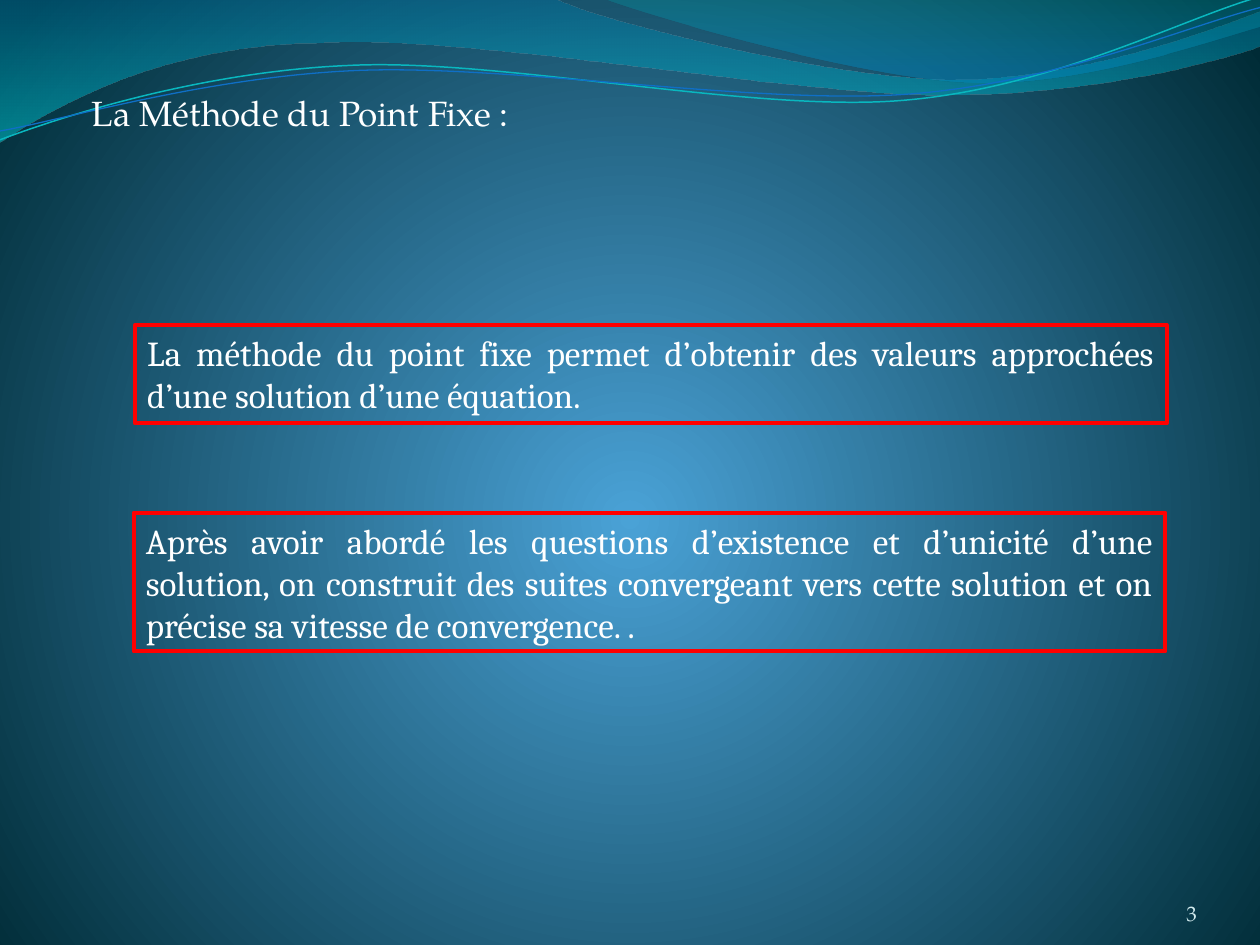
from lxml.etree import SubElement
from pptx import Presentation
from pptx.dml.color import RGBColor
from pptx.enum.shapes import MSO_SHAPE
from pptx.enum.text import MSO_ANCHOR as Anchor, MSO_AUTO_SIZE as AutoSize, PP_ALIGN as Align
from pptx.oxml.ns import qn
from pptx.util import Cm, Pt

WHITE = RGBColor(0xFF, 0xFF, 0xFF)
RED = RGBColor(0xFF, 0x00, 0x00)
PALE_AQUA = RGBColor(0xD1, 0xEA, 0xED)
SKY = RGBColor(0x4A, 0xA2, 0xD6)
NIGHT = RGBColor(0x00, 0x2B, 0x36)
OCEAN = RGBColor(0x00, 0x74, 0xA0)
TURQUOISE = RGBColor(0x00, 0xC4, 0xCD)
AZURE = RGBColor(0x00, 0x8A, 0xBF)
TEAL = RGBColor(0x00, 0xA0, 0xA8)
CYAN_LINE = RGBColor(0x09, 0xB7, 0xBF)
BLUE_LINE = RGBColor(0x0F, 0x6F, 0xC6)

TITLE_FONT = "TeX Gyre Pagella"
BODY_FONT = "Cambria"

LEFT_BAND = [
    (0, 0), (4.4, -0.01), (4.76, 0.17, 6.64, 0.63, 7.58, 0.63),
    (8.53, 0.63, 9.58, 0.26, 10, 0.09), (10.01, 0.36),
    (9.83, 0.44, 8.7, 0.76, 7.46, 0.75), (6.22, 0.75, 3.82, 0.28, 2.57, 0.34),
    (1.29, 0.35, 0.46, 0.83, -0.01, 1.13),
]
RIGHT_BAND = [
    (4.79, -0.01), (5.09, 0.11, 6.82, 0.62, 7.69, 0.65),
    (8.56, 0.69, 9.61, 0.32, 10, 0.21), (10, 0),
]
CYAN_WAVE = [
    (0, 1.11), (0.48, 0.93, 1.58, 0.57, 2.77, 0.52),
    (3.95, 0.46, 5.93, 0.89, 7.13, 0.8), (8.33, 0.71, 9.38, 0.15, 9.98, -0.02),
]
BLUE_WAVE = [
    (0, 1.04), (0.47, 0.96, 1.64, 0.61, 2.83, 0.56),
    (4.03, 0.51, 5.97, 0.83, 7.17, 0.75), (8.36, 0.67, 9.41, 0.21, 10, 0.06),
]


def inches(*values):
    """Convert inch values to lengths."""
    return [Cm(value * 2.54) for value in values]


def bend_line(line, segment, shape):
    """Turn a straight path step into a cubic curve."""
    line.tag_name = None
    curve = line.makeelement(qn("a:cubicBezTo"))
    lengths = inches(*segment)
    for x, y in zip(lengths[::2], lengths[1::2]):
        SubElement(curve, qn("a:pt"), x=str(x - shape.left), y=str(y - shape.top))
    line.getparent().replace(line, curve)


def add_outline(slide, segments, close):
    """Add a freeform of straight and cubic segments."""
    anchors = [inches(*segment[-2:]) for segment in segments]
    builder = slide.shapes.build_freeform(*anchors[0])
    builder.add_line_segments(anchors[1:], close=close)
    shape = builder.convert_to_shape()
    shape.shadow.inherit = False
    lines = list(shape._element.iter(qn("a:lnTo")))
    for line, segment in zip(lines, segments[1:]):
        if len(segment) == 6:
            bend_line(line, segment, shape)
    return shape


def set_gradient(fill, stops):
    """Give a fill two stops of position, colour and opacity in percent."""
    fill.gradient()
    for stop, (position, color, opacity) in zip(fill.gradient_stops, stops):
        stop.position = position
        stop.color.rgb = color
        if opacity < 100:
            color_element = stop._gs.find(qn("a:srgbClr"))
            SubElement(color_element, qn("a:alpha"), val=str(opacity * 1000))


def set_background(slide):
    """Paint the radial background."""
    set_gradient(slide.background.fill, [(0, SKY, 100), (1, NIGHT, 100)])
    gradient = next(slide._element.iter(qn("a:gradFill")))
    gradient.remove(gradient.find(qn("a:lin")))
    circle = SubElement(gradient, qn("a:path"), path="circle")
    SubElement(circle, qn("a:fillToRect"), l="50000", t="55000", r="50000", b="45000")


def add_band(slide, segments, stops, angle):
    """Add a translucent gradient band."""
    band = add_outline(slide, segments, True)
    set_gradient(band.fill, stops)
    band.fill.gradient_angle = angle
    band.line.fill.background()


def add_wave(slide, segments, color, width):
    """Add a thin wave line."""
    wave = add_outline(slide, segments, False)
    wave.fill.background()
    wave.line.color.rgb = color
    wave.line.width = Pt(width)


def write_text(shape, text, font, size, color, align):
    """Write one paragraph into a shape."""
    shape.text_frame.word_wrap = True
    paragraph = shape.text_frame.paragraphs[0]
    paragraph.alignment = align
    run = paragraph.add_run()
    run.text = text
    run.font.name = font
    run.font.size = Pt(size)
    run.font.color.rgb = color


def add_framed_text(slide, box, text):
    """Add justified text in a red frame."""
    shape = slide.shapes.add_shape(MSO_SHAPE.RECTANGLE, *inches(*box))
    shape.shadow.inherit = False
    shape.fill.background()
    shape.line.color.rgb = RED
    shape.line.width = Pt(2.25)
    shape.text_frame.vertical_anchor = Anchor.TOP
    shape.text_frame.auto_size = AutoSize.SHAPE_TO_FIT_TEXT
    write_text(shape, text, BODY_FONT, 20, WHITE, Align.JUSTIFY)


def add_title(slide, text):
    """Add the slide title."""
    title = slide.shapes.add_textbox(*inches(0.63, 0.68, 5.95, 0.44))
    title.text_frame.auto_size = AutoSize.SHAPE_TO_FIT_TEXT
    write_text(title, text, TITLE_FONT, 20, WHITE, Align.LEFT)


def add_page_number(slide, text):
    """Add the page number at the bottom right."""
    number = slide.shapes.add_textbox(*inches(8.67, 6.95, 0.83, 0.4))
    frame = number.text_frame
    frame.margin_left = frame.margin_right = frame.margin_top = frame.margin_bottom = 0
    frame.vertical_anchor = Anchor.BOTTOM
    write_text(number, text, TITLE_FONT, 12, PALE_AQUA, Align.RIGHT)


def main():
    """Build and save the slide."""
    presentation = Presentation()
    presentation.slide_width, presentation.slide_height = inches(10, 7.5)
    slide = presentation.slides.add_slide(presentation.slide_layouts[6])
    set_background(slide)
    add_band(slide, LEFT_BAND, [(0, OCEAN, 45), (1, TURQUOISE, 55)], 270)
    add_band(slide, RIGHT_BAND, [(0.2, AZURE, 45), (1, TEAL, 30)], 90)
    add_wave(slide, CYAN_WAVE, CYAN_LINE, 0.85)
    add_wave(slide, BLUE_WAVE, BLUE_LINE, 0.75)
    add_framed_text(
        slide, (1.07, 2.58, 8.19, 0.78),
        "La méthode du point fixe permet d’obtenir des valeurs approchées "
        "d’une solution d’une équation.",
    )
    add_page_number(slide, "3")
    add_title(slide, "La Méthode du Point Fixe :")
    add_framed_text(
        slide, (1.06, 4.07, 8.19, 1.1),
        "Après avoir abordé les questions d’existence et d’unicité d’une solution, "
        "on construit des suites convergeant vers cette solution et on précise "
        "sa vitesse de convergence. .",
    )
    presentation.save("out.pptx")


if __name__ == "__main__":
    main()
